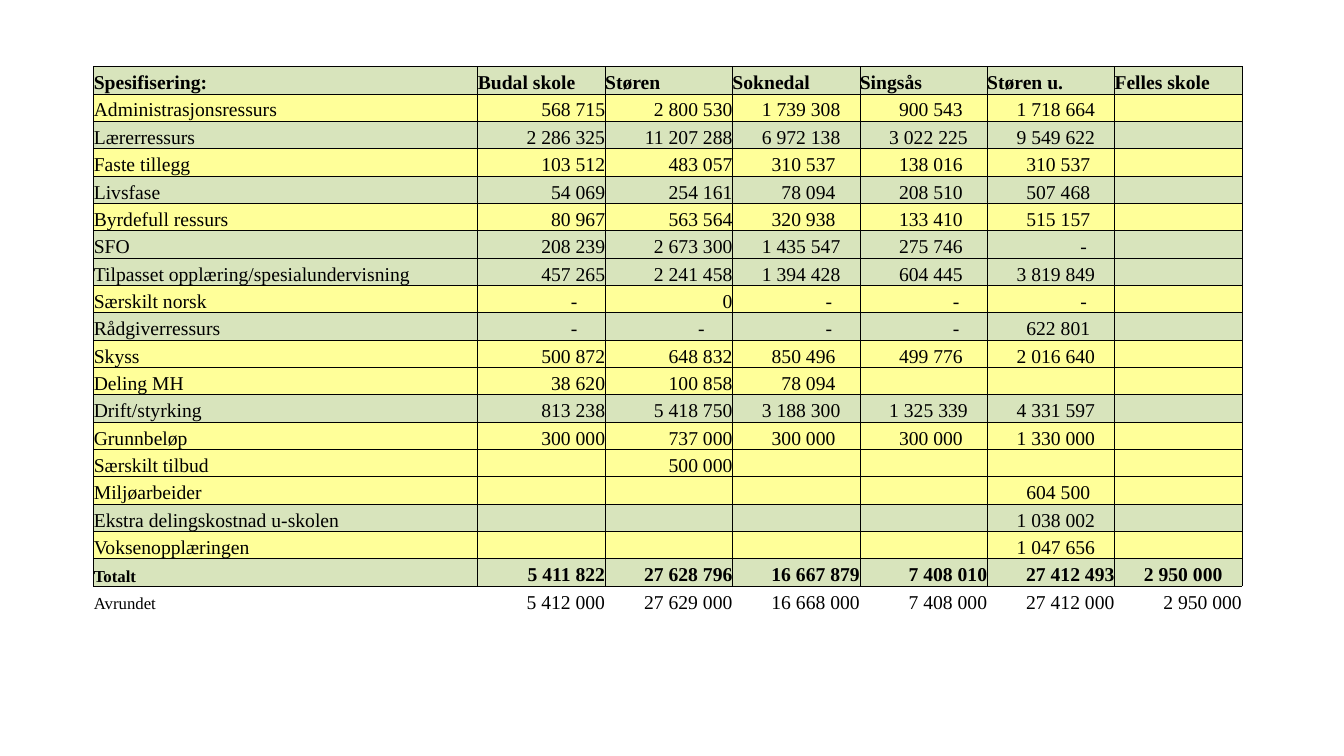
from dataclasses import dataclass

from lxml.etree import SubElement
from pptx import Presentation
from pptx.dml.color import RGBColor
from pptx.enum.text import MSO_ANCHOR, PP_ALIGN
from pptx.oxml.ns import qn
from pptx.slide import Slide
from pptx.table import _Cell
from pptx.util import Pt

GREEN = RGBColor(0xD8, 0xE4, 0xBC)
YELLOW = RGBColor(0xFF, 0xFF, 0x99)
BLACK = RGBColor(0x00, 0x00, 0x00)

FONT = "Times New Roman"
LABEL_WIDTH, SCHOOL_WIDTH, ROW_HEIGHT = 274.3, 90.97, 19.55
TEXT_SIZE, SUMMARY_LABEL_SIZE = 14, 12
BORDER_WIDTH = Pt(0.5)
# Left indent of an amount, by its number of characters
INDENTS = {9: 21, 7: 28, 6: 35, 1: 66.5}
RIGHT_ALIGNED_SCHOOLS = (1, 2)


@dataclass(frozen=True)
class BudgetRow:
    label: str
    amounts: tuple[str, ...]
    fill: RGBColor | None
    bold: bool = False
    label_size: float = TEXT_SIZE


HEADER = BudgetRow(
    "Spesifisering:",
    ("Budal skole", "Støren", "Soknedal", "Singsås", "Støren u.", "Felles skole"),
    GREEN, bold=True)
ITEMS = [
    BudgetRow("Administrasjonsressurs",
              ("568 715", "2 800 530", "1 739 308", "900 543", "1 718 664", ""), YELLOW),
    BudgetRow("Lærerressurs",
              ("2 286 325", "11 207 288", "6 972 138", "3 022 225", "9 549 622", ""), GREEN),
    BudgetRow("Faste tillegg",
              ("103 512", "483 057", "310 537", "138 016", "310 537", ""), YELLOW),
    BudgetRow("Livsfase",
              ("54 069", "254 161", "78 094", "208 510", "507 468", ""), GREEN),
    BudgetRow("Byrdefull ressurs",
              ("80 967", "563 564", "320 938", "133 410", "515 157", ""), YELLOW),
    BudgetRow("SFO",
              ("208 239", "2 673 300", "1 435 547", "275 746", "-", ""), GREEN),
    BudgetRow("Tilpasset opplæring/spesialundervisning",
              ("457 265", "2 241 458", "1 394 428", "604 445", "3 819 849", ""), GREEN),
    BudgetRow("Særskilt norsk", ("-", "0", "-", "-", "-", ""), YELLOW),
    BudgetRow("Rådgiverressurs", ("-", "-", "-", "-", "622 801", ""), GREEN),
    BudgetRow("Skyss",
              ("500 872", "648 832", "850 496", "499 776", "2 016 640", ""), YELLOW),
    BudgetRow("Deling MH", ("38 620", "100 858", "78 094", "", "", ""), YELLOW),
    BudgetRow("Drift/styrking",
              ("813 238", "5 418 750", "3 188 300", "1 325 339", "4 331 597", ""), GREEN),
    BudgetRow("Grunnbeløp",
              ("300 000", "737 000", "300 000", "300 000", "1 330 000", ""), YELLOW),
    BudgetRow("Særskilt tilbud", ("", "500 000", "", "", "", ""), YELLOW),
    BudgetRow("Miljøarbeider", ("", "", "", "", "604 500", ""), YELLOW),
    BudgetRow("Ekstra delingskostnad u-skolen", ("", "", "", "", "1 038 002", ""), GREEN),
    BudgetRow("Voksenopplæringen", ("", "", "", "", "1 047 656", ""), YELLOW),
]
TOTAL = BudgetRow(
    "Totalt",
    ("5 411 822", "27 628 796", "16 667 879", "7 408 010", "27 412 493", "2 950 000"),
    GREEN, bold=True, label_size=SUMMARY_LABEL_SIZE)
ROUNDED = BudgetRow(
    "Avrundet",
    ("5 412 000", "27 629 000", "16 668 000", "7 408 000", "27 412 000", "2 950 000"),
    None, label_size=SUMMARY_LABEL_SIZE)
ROWS = [HEADER, *ITEMS, TOTAL, ROUNDED]


def set_borders(cell: _Cell, visible_sides: str) -> None:
    """Draw the named sides (out of L, R, T, B) and clear the others."""
    properties = cell._tc.get_or_add_tcPr()
    for side in "LRTB":
        line = SubElement(properties, qn(f"a:ln{side}"), w=str(BORDER_WIDTH))
        if side in visible_sides:
            solid = SubElement(line, qn("a:solidFill"))
            SubElement(solid, qn("a:srgbClr"), val=str(BLACK))
        else:
            SubElement(line, qn("a:noFill"))


def is_right_aligned(row: BudgetRow, column: int, text: str) -> bool:
    if row is HEADER or column == 0 or text == "-":
        return False
    if row is TOTAL:
        return column < len(row.amounts)
    return row is ROUNDED or column in RIGHT_ALIGNED_SCHOOLS


def fill_cell(cell: _Cell, row: BudgetRow, column: int, text: str) -> None:
    set_borders(cell, "LRTB" if row.fill else "T")
    if row.fill:
        cell.fill.solid()
        cell.fill.fore_color.rgb = row.fill
    else:
        cell.fill.background()

    right_aligned = is_right_aligned(row, column, text)
    indented = column > 0 and row is not HEADER and text and not right_aligned
    cell.margin_left = Pt(INDENTS[len(text)] if indented else 0)
    cell.margin_right = cell.margin_top = cell.margin_bottom = 0
    cell.vertical_anchor = MSO_ANCHOR.BOTTOM

    size = Pt(row.label_size if column == 0 else TEXT_SIZE)
    paragraph = cell.text_frame.paragraphs[0]
    paragraph.alignment = PP_ALIGN.RIGHT if right_aligned else PP_ALIGN.LEFT
    if text:
        paragraph.text = text
    else:
        # Keeps an empty cell from stretching its row
        SubElement(paragraph._p, qn("a:endParaRPr"), sz=str(size.centipoints))
    font = paragraph.font
    font.name, font.size, font.bold = FONT, size, row.bold
    font.color.rgb = BLACK


def add_budget_table(slide: Slide) -> None:
    widths = [LABEL_WIDTH] + [SCHOOL_WIDTH] * len(HEADER.amounts)
    table = slide.shapes.add_table(
        len(ROWS), len(widths), Pt(67), Pt(47.5),
        Pt(sum(widths)), Pt(ROW_HEIGHT * len(ROWS))).table
    table.first_row = table.horz_banding = False
    for table_column, width in zip(table.columns, widths):
        table_column.width = Pt(width)
    for row_index, row in enumerate(ROWS):
        table.rows[row_index].height = Pt(ROW_HEIGHT)
        for column, text in enumerate((row.label, *row.amounts)):
            fill_cell(table.cell(row_index, column), row, column, text)


def main() -> None:
    presentation = Presentation()
    presentation.slide_width, presentation.slide_height = Pt(960), Pt(540)
    blank_layout = presentation.slide_layouts[6]
    add_budget_table(presentation.slides.add_slide(blank_layout))
    presentation.save("out.pptx")


if __name__ == "__main__":
    main()
